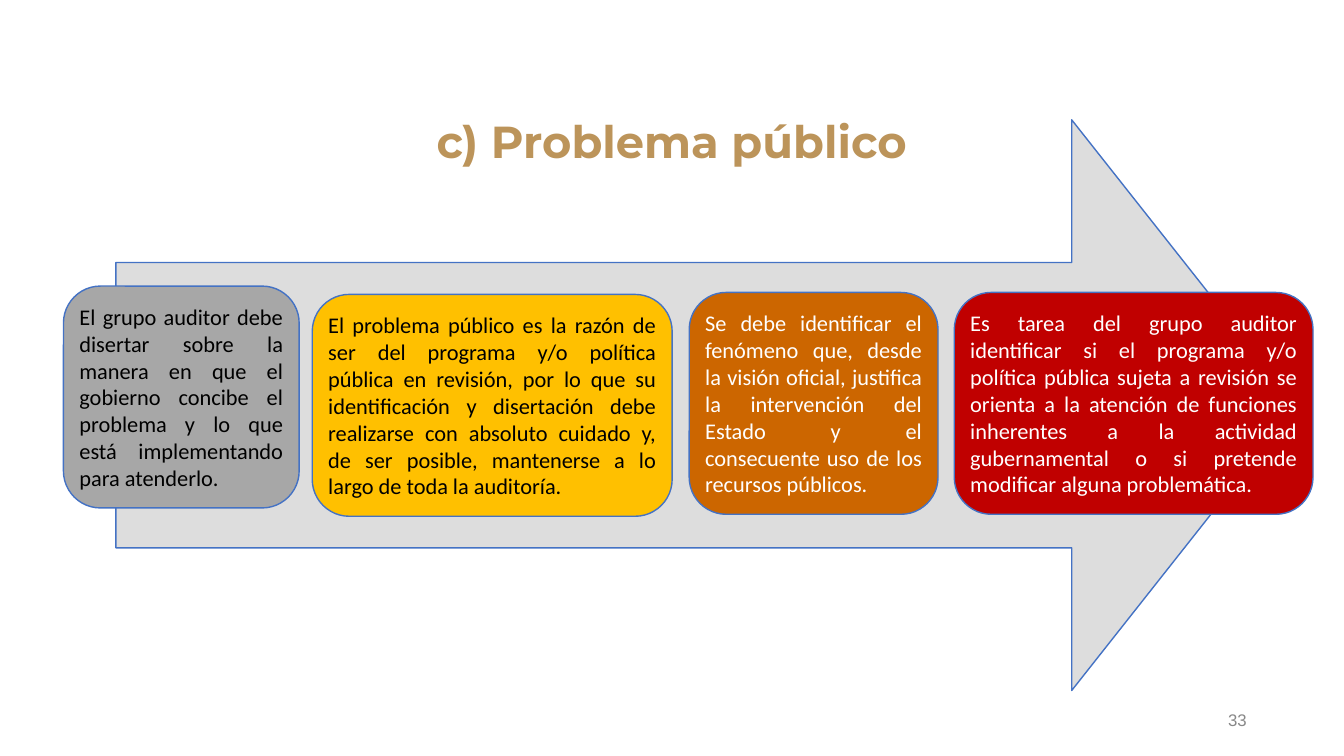
from pptx import Presentation
from pptx.dml.color import RGBColor
from pptx.enum.shapes import MSO_SHAPE
from pptx.enum.text import MSO_ANCHOR, PP_ALIGN
from pptx.util import Cm, Pt

ARROW, ROUNDED = MSO_SHAPE.RIGHT_ARROW, MSO_SHAPE.ROUNDED_RECTANGLE
MIDDLE, BOTTOM = MSO_ANCHOR.MIDDLE, MSO_ANCHOR.BOTTOM
CENTER, RIGHT, JUSTIFY = PP_ALIGN.CENTER, PP_ALIGN.RIGHT, PP_ALIGN.JUSTIFY

COLORS = {
    "gold": "BC945A", "number": "888888", "outline": "4472C4",
    "arrow": "DDDDDD", "gray": "A7A7A7", "yellow": "FFC000",
    "orange": "CC6600", "red": "C00000", "black": "000000", "white": "FFFFFF",
}


def write(shape, text, anchor, align, color, wrap=True, **font_format):
    frame = shape.text_frame
    frame_format = {"word_wrap": wrap, "vertical_anchor": anchor}
    for side in ("left", "top", "right", "bottom"):
        frame_format["margin_" + side] = Cm(0.13)
    for name, value in frame_format.items():
        setattr(frame, name, value)
    para = frame.paragraphs[0]
    para.alignment = align
    span = para.add_run()
    span.text = text
    for name, value in font_format.items():
        setattr(span.font, name, value)
    span.font.color.rgb = RGBColor.from_string(COLORS[color])
    return para


def add_outlined(kind, left, top, width, height, fill):
    shape = slide.shapes.add_shape(kind, Cm(left), Cm(top), Cm(width), Cm(height))
    shape.shadow.inherit = False
    shape.fill.solid()
    shape.fill.fore_color.rgb = RGBColor.from_string(COLORS[fill])
    shape.line.color.rgb = RGBColor.from_string(COLORS["outline"])
    shape.line.width = Pt(1)
    return shape


deck = Presentation()
deck.slide_width, deck.slide_height = Cm(33.87), Cm(19.05)
slide = deck.slides.add_slide(deck.slide_layouts[5])

# Title
title = slide.shapes.title
title.left, title.top, title.width, title.height = Cm(2.31), Cm(2.18), Cm(29.24), Cm(2.18)
heading = write(title, "c) Problema público", BOTTOM, CENTER, "gold",
                name="Montserrat", size=Pt(32), bold=True)
heading.line_spacing = 0.9

# Slide number
number = slide.shapes.add_textbox(Cm(30.81), Cm(17.78), Cm(0.74), Cm(0.74))
write(number, "33", MIDDLE, RIGHT, "number", wrap=False, name="Arial", size=Pt(12))

# Background arrow
arrow = add_outlined(ARROW, 2.92, 3.02, 29.77, 14.38, "arrow")
arrow.adjustments[0] = 0.5
arrow.adjustments[1] = 0.395

# Steps: left, top, width, fill, text colour, text
STEPS = [
    (1.6, 7.21, 5.94, "gray", "black",
     "El grupo auditor debe disertar sobre la manera en que el gobierno concibe "
     "el problema y lo que está implementando para atenderlo."),
    (7.87, 7.42, 9.07, "yellow", "black",
     "El problema público es la razón de ser del programa y/o política pública en "
     "revisión, por lo que su identificación y disertación debe realizarse con "
     "absoluto cuidado y, de ser posible, mantenerse a lo largo de toda la auditoría."),
    (17.37, 7.37, 6.27, "orange", "white",
     "Se debe identificar el fenómeno que, desde la visión oficial, justifica la "
     "intervención del Estado y el consecuente uso de los recursos públicos."),
    (24.05, 7.37, 9.04, "red", "white",
     "Es tarea del grupo auditor identificar si el programa y/o política pública "
     "sujeta a revisión se orienta a la atención de funciones inherentes a la "
     "actividad gubernamental o si pretende modificar alguna problemática."),
]
for left, top, width, fill, color, text in STEPS:
    box = add_outlined(ROUNDED, left, top, width, 5.59, fill)
    write(box, text, MIDDLE, JUSTIFY, color, name="Calibri", size=Pt(16))

deck.save("out.pptx")
